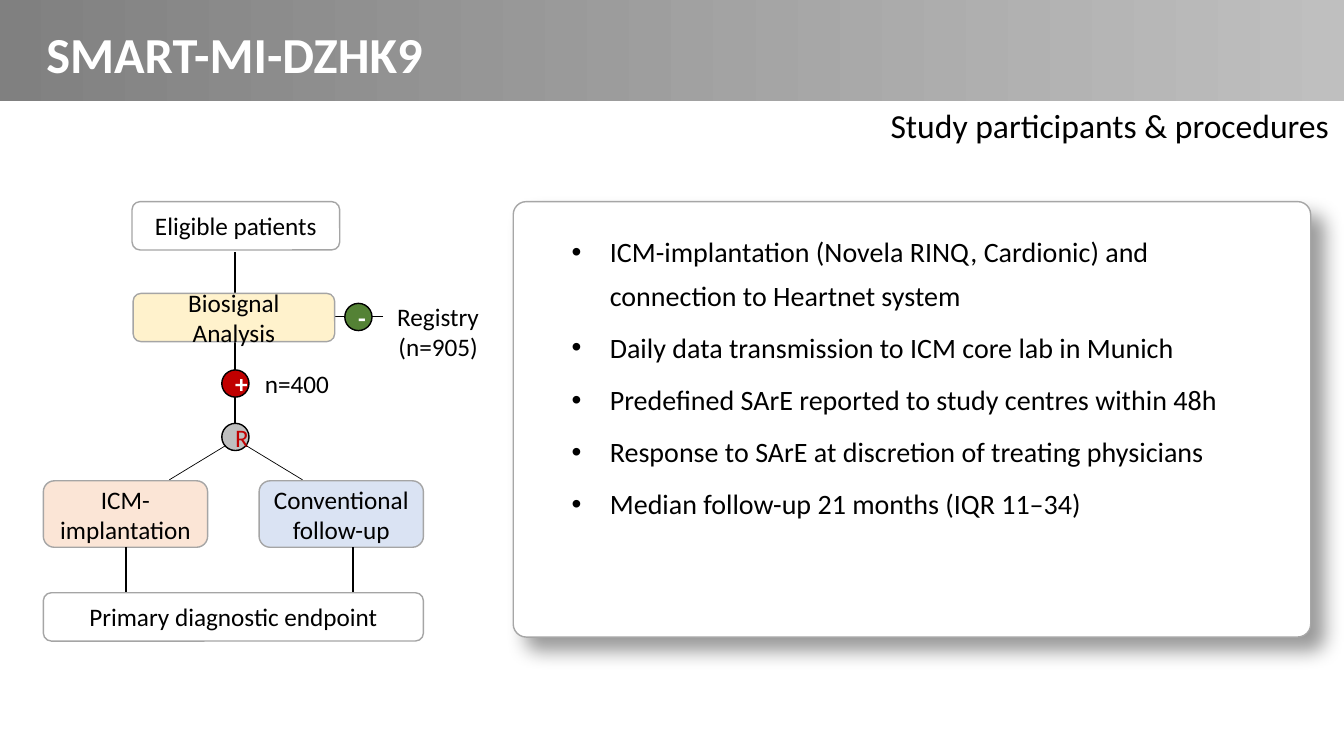
from lxml.etree import SubElement
from pptx import Presentation
from pptx.dml.color import RGBColor
from pptx.enum.shapes import MSO_CONNECTOR, MSO_SHAPE
from pptx.enum.text import MSO_ANCHOR, MSO_AUTO_SIZE, PP_ALIGN
from pptx.oxml.ns import qn
from pptx.util import Pt

PX = 9144  # EMU per px, 100 px to the inch
FONT = "Calibri"
COLORS = {
    "black": "000000", "white": "FFFFFF", "border": "A5A5A5", "panel_border": "A6A6A6",
    "band_dark": "808080", "band_light": "BFBFBF", "yellow": "FFF2CC", "orange": "FBE5D6",
    "blue": "DAE3F3", "green": "548235", "red": "C00000", "grey": "BFBFBF",
}
PROCEDURES = [
    "ICM-implantation (Novela RINQ, Cardionic) and connection to Heartnet system",
    "Daily data transmission to ICM core lab in Munich",
    "Predefined SArE reported to study centres within 48h",
    "Response to SArE at discretion of treating physicians",
    "Median follow-up 21 months (IQR 11–34)",
]


def rgb(name):
    return RGBColor.from_string(COLORS[name])


def box_px(*lengths):
    return [length * PX for length in lengths]


def add_run(paragraph, text, size=18, color="black", bold=False):
    run = paragraph.add_run()
    run.text = text
    run.font.name = FONT
    run.font.size = Pt(size)
    run.font.bold = bold
    run.font.color.rgb = rgb(color)


def add_panel(slide, kind, box, fill, border, text="", color="black", bold=False):
    shape = slide.shapes.add_shape(kind, *box_px(*box))
    shape.shadow.inherit = False
    shape.fill.solid()
    shape.fill.fore_color.rgb = rgb(fill)
    shape.line.color.rgb = rgb(border)
    shape.line.width = Pt(1)
    if text:
        frame = shape.text_frame
        frame.vertical_anchor = MSO_ANCHOR.MIDDLE
        frame.paragraphs[0].alignment = PP_ALIGN.CENTER
        add_run(frame.paragraphs[0], text, color=color, bold=bold)
    return shape


def add_step(slide, box, text, fill="white"):
    add_panel(slide, MSO_SHAPE.ROUNDED_RECTANGLE, box, fill, "border", text)


def add_node(slide, left, top, text, fill, color="white", bold=True):
    add_panel(slide, MSO_SHAPE.OVAL, (left, top, 27, 27), fill, "black", text, color, bold)


def add_line(slide, start, end, width=1):
    line = slide.shapes.add_connector(MSO_CONNECTOR.STRAIGHT, *box_px(*start, *end))
    line.line.color.rgb = rgb("black")
    line.line.width = Pt(width)
    SubElement(line.element.spPr, qn("a:effectLst"))


def add_label(slide, box, lines, size=18, align=PP_ALIGN.LEFT, wrap=False):
    label = slide.shapes.add_textbox(*box_px(*box))
    frame = label.text_frame
    frame.word_wrap = wrap
    frame.auto_size = MSO_AUTO_SIZE.SHAPE_TO_FIT_TEXT
    for index, text in enumerate(lines):
        paragraph = frame.add_paragraph() if index else frame.paragraphs[0]
        paragraph.alignment = align
        add_run(paragraph, text, size)
    return label


def add_bullets(slide, box, lines):
    label = add_label(slide, box, lines, size=20, wrap=True)
    for paragraph in label.text_frame.paragraphs:
        paragraph.line_spacing = 1.3
        paragraph.space_after = Pt(6)
        properties = paragraph._p.get_or_add_pPr()
        properties.set("marL", str(38 * PX))
        properties.set("indent", str(-38 * PX))
        SubElement(properties, qn("a:buFont"), typeface="Arial")
        SubElement(properties, qn("a:buChar"), char="•")


def add_drop_shadow(shape):
    effects = shape.element.spPr.find(qn("a:effectLst"))
    shadow = SubElement(effects, qn("a:outerShdw"), blurRad=str(Pt(14)), dist=str(Pt(13)),
                        dir="2700000", algn="tl", rotWithShape="0")
    color = SubElement(shadow, qn("a:srgbClr"), val=COLORS["black"])
    SubElement(color, qn("a:alpha"), val="40000")


def add_header(slide):
    band = slide.shapes.add_shape(MSO_SHAPE.RECTANGLE, *box_px(-1, -1, 1334, 101))
    band.shadow.inherit = False
    band.line.fill.background()
    band.fill.gradient()
    band.fill.gradient_angle = 0
    for stop, name in zip(band.fill.gradient_stops, ("band_dark", "band_light")):
        stop.color.rgb = rgb(name)

    title = slide.shapes.title
    title.element.addprevious(band.element)  # the band lies behind the title
    title.left, title.top, title.width, title.height = box_px(46, 23, 1022, 61)
    frame = title.text_frame
    frame.margin_left = frame.margin_right = frame.margin_top = frame.margin_bottom = 0
    frame.vertical_anchor = MSO_ANCHOR.TOP
    frame.auto_size = MSO_AUTO_SIZE.NONE
    frame.word_wrap = True
    frame.paragraphs[0].alignment = PP_ALIGN.LEFT
    add_run(frame.paragraphs[0], "SMART-MI-DZHK9", 36, "white", True)
    add_label(slide, (869, 99, 459, 50), ["Study participants & procedures"], 24, PP_ALIGN.RIGHT)


def add_flowchart(slide):
    axis = 233
    # Screening
    add_line(slide, (axis, 312), (axis, 420))
    add_step(slide, (131, 200, 206, 48), "Eligible patients")
    add_line(slide, (axis, 250), (axis, 291))
    add_line(slide, (380, 314), (323, 314))
    add_node(slide, 342, 301, "-", "green")
    add_label(slide, (384, 294, 101, 71), ["Registry", "(n=905)"], align=PP_ALIGN.CENTER)
    add_step(slide, (132, 291, 200, 48), "Biosignal Analysis", "yellow")
    # Randomisation
    add_node(slide, 220, 367, "+", "red")
    add_label(slide, (253, 360, 84, 40), ["n=400"])
    add_node(slide, 220, 420, "R", "grey", "red", False)
    # Study arms
    arms = [("ICM-implantation", "orange", 43, 224, 168, 125),
            ("Conventional follow-up", "blue", 257, 244, 300, 350)]
    for text, fill, left, branch_start, branch_end, stem in arms:
        add_line(slide, (branch_start, 442), (branch_end, 476), 0.5)
        add_step(slide, (left, 477, 163, 66), text, fill)
        add_line(slide, (stem, 543), (stem, 588))
    add_step(slide, (43, 588, 377, 48), "Primary diagnostic endpoint")


def add_procedures(slide):
    panel = add_panel(slide, MSO_SHAPE.ROUNDED_RECTANGLE, (509, 200, 791, 432),
                      "white", "panel_border")
    panel.adjustments[0] = 0.03
    add_drop_shadow(panel)
    add_bullets(slide, (557, 218, 719, 303), PROCEDURES)


def main():
    presentation = Presentation()
    presentation.slide_width, presentation.slide_height = box_px(1333, 750)
    slide = presentation.slides.add_slide(presentation.slide_layouts[5])
    add_header(slide)
    add_flowchart(slide)
    add_procedures(slide)
    presentation.save("out.pptx")


if __name__ == "__main__":
    main()
